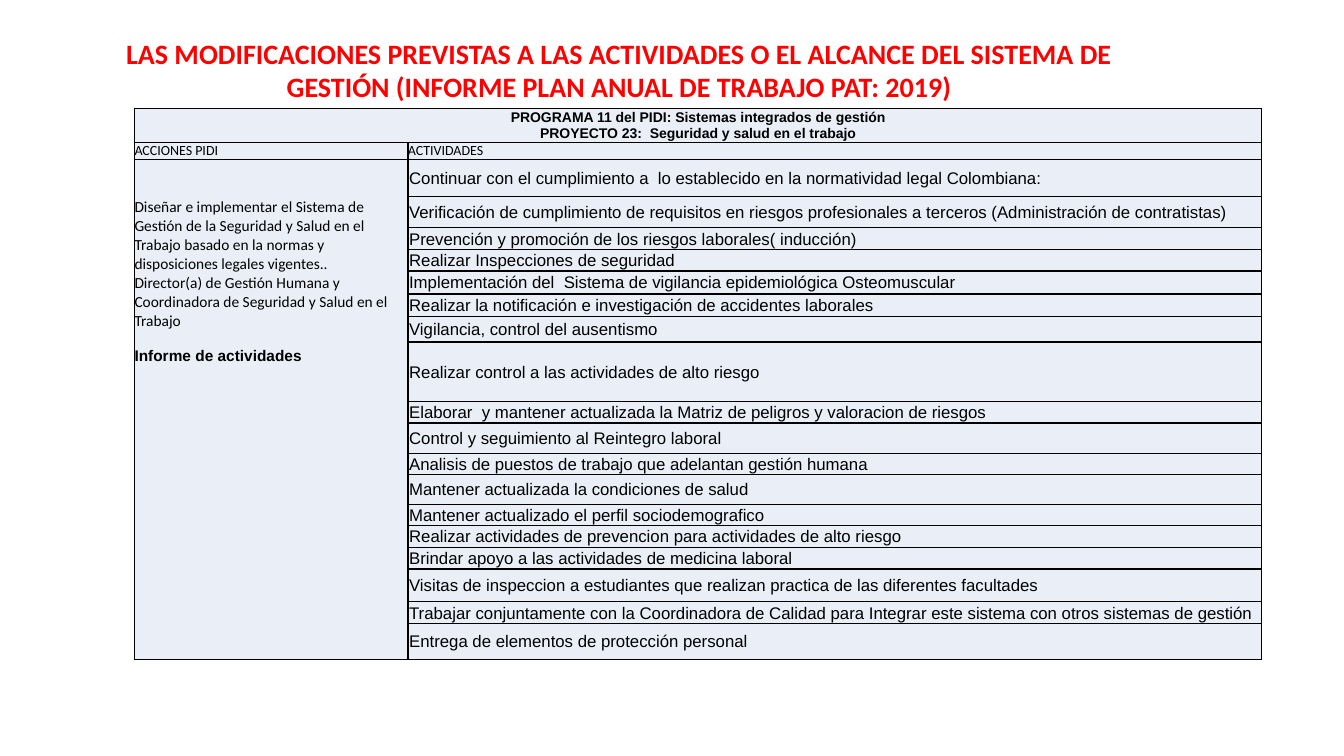
from lxml import etree
from pptx import Presentation
from pptx.dml.color import RGBColor
from pptx.enum.text import MSO_ANCHOR, PP_ALIGN
from pptx.oxml.ns import qn
from pptx.util import Cm, Pt

COLORS = {"title": "FF0000", "text": "000000", "border": "000000", "cell": "EAEFF7"}
ACTIVITIES = [
    ("Continuar con el cumplimiento a  lo establecido en la normatividad legal Colombiana:", 0.94),
    ("Verificación de cumplimiento de requisitos en riesgos profesionales a terceros (Administración de contratistas)", 0.78),
    ("Prevención y promoción de los riesgos laborales( inducción)", 0.55),
    ("Realizar Inspecciones de seguridad", 0.53),
    ("Implementación del  Sistema de vigilancia epidemiológica Osteomuscular", 0.58),
    ("Realizar la notificación e investigación de accidentes laborales", 0.56),
    ("Vigilancia, control del ausentismo", 0.65),
    ("Realizar control a las actividades de alto riesgo", 1.49),
    ("Elaborar  y mantener actualizada la Matriz de peligros y valoracion de riesgos", 0.55),
    ("Control y seguimiento al Reintegro laboral", 0.76),
    ("Analisis de puestos de trabajo que adelantan gestión humana", 0.53),
    ("Mantener actualizada la condiciones de salud", 0.75),
    ("Mantener actualizado el perfil sociodemografico", 0.53),
    ("Realizar actividades de prevencion para actividades de alto riesgo", 0.53),
    ("Brindar apoyo a las actividades de medicina laboral", 0.55),
    ("Visitas de inspeccion a estudiantes que realizan practica de las diferentes facultades", 0.83),
    ("Trabajar conjuntamente con la Coordinadora de Calidad para Integrar este sistema con otros sistemas de gestión", 0.53),
    ("Entrega de elementos de protección personal", 0.91),
]
ROW_HEIGHTS = [0.86, 0.43] + [height for _, height in ACTIVITIES]


def write(text_frame, lines, size, name, bold=False, align=PP_ALIGN.LEFT, color="text"):
    text_frame.text = "\n".join(lines)
    for paragraph in text_frame.paragraphs:
        paragraph.alignment = align
        paragraph.font.size = Pt(size)
        paragraph.font.name = name
        paragraph.font.bold = bold
        paragraph.font.color.rgb = RGBColor.from_string(COLORS[color])


def style_cell(cell):
    properties = cell._tc.get_or_add_tcPr()
    for side in ("a:lnL", "a:lnR", "a:lnT", "a:lnB"):
        line = etree.SubElement(properties, qn(side), w=str(Pt(1)))
        fill = etree.SubElement(line, qn("a:solidFill"))
        etree.SubElement(fill, qn("a:srgbClr"), val=COLORS["border"])
    cell.fill.solid()
    cell.fill.fore_color.rgb = RGBColor.from_string(COLORS["cell"])
    cell.vertical_anchor = MSO_ANCHOR.MIDDLE
    cell.margin_left = cell.margin_right = cell.margin_top = cell.margin_bottom = 0


presentation = Presentation()
presentation.slide_width = Cm(33.87)
presentation.slide_height = Cm(19.05)
slide = presentation.slides.add_slide(presentation.slide_layouts[6])

title = slide.shapes.add_textbox(Cm(1.85), Cm(0.79), Cm(27.51), Cm(1.96))
title.text_frame.word_wrap = True
write(
    title.text_frame,
    ["LAS MODIFICACIONES PREVISTAS A LAS ACTIVIDADES O EL ALCANCE DEL SISTEMA DE GESTIÓN "
     "(INFORME PLAN ANUAL DE TRABAJO PAT: 2019)"],
    20, "Calibri", True, PP_ALIGN.CENTER, "title",
)

table = slide.shapes.add_table(
    len(ROW_HEIGHTS), 2, Cm(3.39), Cm(2.73), Cm(28.4), Cm(sum(ROW_HEIGHTS))
).table
table.columns[0].width = Cm(6.89)
table.columns[1].width = Cm(21.51)
for row, height in zip(table.rows, ROW_HEIGHTS):
    row.height = Cm(height)
for cell in table.iter_cells():
    style_cell(cell)

program = table.cell(0, 0)
program.merge(table.cell(0, 1))
write(
    program.text_frame,
    ["PROGRAMA 11 del PIDI: Sistemas integrados de gestión",
     "PROYECTO 23:  Seguridad y salud en el trabajo"],
    10, "Arial", True, PP_ALIGN.CENTER,
)

for column, heading in enumerate(["ACCIONES PIDI", "ACTIVIDADES"]):
    write(table.cell(1, column).text_frame, [heading], 10, "Calibri", align=PP_ALIGN.JUSTIFY)

action = table.cell(2, 0)
action.merge(table.cell(len(ROW_HEIGHTS) - 1, 0))
action.vertical_anchor = MSO_ANCHOR.TOP
action.margin_top = Cm(0.95)
write(
    action.text_frame,
    ["Diseñar e implementar el Sistema de Gestión de la Seguridad y Salud en el Trabajo "
     "basado en la normas y disposiciones legales vigentes..",
     "Director(a) de Gestión Humana y  Coordinadora de Seguridad y Salud en el Trabajo",
     "Informe de actividades"],
    11, "Calibri",
)
report = action.text_frame.paragraphs[-1]
report.space_before = Pt(12.5)
report.font.name = "Arial"
report.font.bold = True

for row_index, (activity, _) in enumerate(ACTIVITIES, start=2):
    cell = table.cell(row_index, 1)
    cell.margin_left = cell.margin_right = cell.margin_top = Cm(0.03)
    write(cell.text_frame, [activity], 12, "Arial", align=PP_ALIGN.JUSTIFY)

presentation.save("out.pptx")
